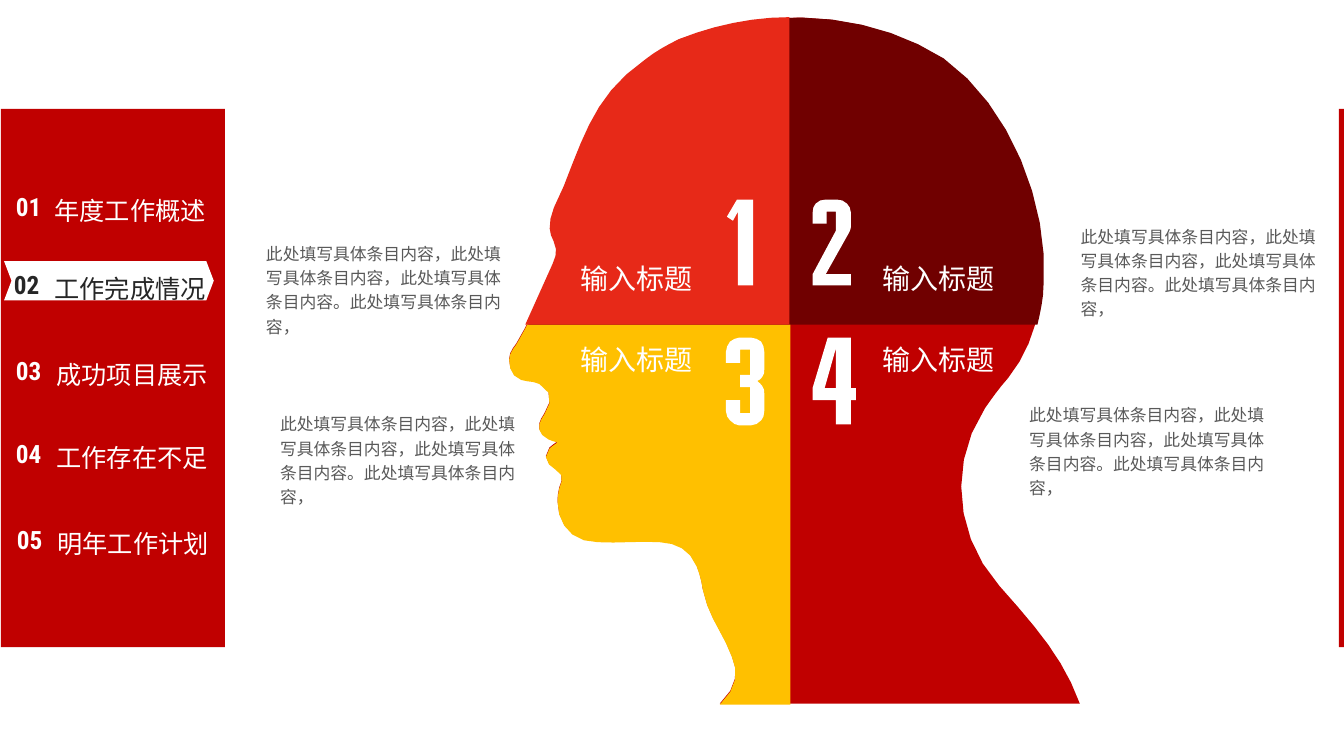
import math
from dataclasses import dataclass

import pptx
import pptx.dml.color
import pptx.enum.shapes
import pptx.enum.text
import pptx.oxml.ns
import pptx.shapes.autoshape
import pptx.slide
import pptx.text.text
import pptx.util
from lxml import etree

PX = 9144  # EMU per px, 100 px to the inch

Step = tuple[int, ...]  # (x, y) is a line, six numbers are a Bezier curve
Contour = list[Step]


@dataclass(frozen=True)
class TextStyle:
    font: str
    size: int
    color: str
    bold: bool = False
    spacing: float = 1.0
    align: pptx.enum.text.PP_ALIGN = pptx.enum.text.PP_ALIGN.LEFT


@dataclass(frozen=True)
class Theme:
    red: str = "C00000"
    dark_red: str = "700000"
    bright_red: str = "E72918"
    yellow: str = "FFC000"
    white: str = "FFFFFF"
    ink: str = "262626"
    grey: str = "595959"
    menu_size: int = 18
    label_size: int = 20
    body_size: int = 12

    def menu_number(self, color: str) -> TextStyle:
        return TextStyle("Roboto Condensed", self.menu_size, color, bold=True)

    def menu_title(self, color: str) -> TextStyle:
        return TextStyle("Open Sans", self.menu_size, color, spacing=1.5,
                         align=pptx.enum.text.PP_ALIGN.CENTER)

    def label(self) -> TextStyle:
        return TextStyle("Noto Sans CJK SC", self.label_size, self.white)

    def body(self) -> TextStyle:
        return TextStyle("Calibri", self.body_size, self.grey, spacing=1.2)


@dataclass(frozen=True)
class Box:
    left: int
    top: int
    width: int
    height: int

    def emu(self) -> list[int]:
        return [n * PX for n in (self.left, self.top, self.width, self.height)]


@dataclass(frozen=True)
class MenuItem:
    number: str
    title: str
    number_left: int
    title_left: int
    top: int
    current: bool = False


@dataclass(frozen=True)
class Region:
    color: str
    contours: list[Contour]


THEME = Theme()
MENU = [
    MenuItem("01", "年度工作概述", 6, 27, 174),
    MenuItem("02", "工作完成情况", 4, 27, 251, current=True),
    MenuItem("03", "成功项目展示", 6, 29, 337),
    MenuItem("04", "工作存在不足", 6, 29, 419),
    MenuItem("05", "明年工作计划", 7, 30, 504),
]
LABEL = "输入标题"
LABEL_LEFTS, LABEL_TOPS = (566, 865), (255, 335)
DESCRIPTION = "此处填写具体条目内容，" * 2 + "此处填写具体条目内容。此处填写具体条目内容，"
DESCRIPTION_CORNERS = [(254, 233), (1062, 216), (268, 402), (1011, 393)]

NAPE: Contour = [(991, 581), (948, 533, 940, 461, 977, 405), (984, 395, 991, 385, 1000, 375),
                 (1021, 349, 1031, 317, 1033, 283)]
SKULL: Contour = [(1039, 204, 1000, 105, 934, 58), (860, 11, 761, 5, 674, 39)]
FOREHEAD: Contour = [(663, 45, 652, 51, 642, 59), (593, 93, 582, 132, 561, 185),
                     (557, 195, 550, 206, 548, 217), (546, 229, 548, 233, 551, 239),
                     (555, 248, 554, 253, 550, 262)]
FACE: Contour = [
    (538, 289, 527, 316, 512, 341), (509, 345, 505, 350, 505, 356),
    (505, 365, 508, 373, 517, 376), (523, 378, 529, 377, 535, 380),
    (549, 387, 547, 400, 540, 410), (538, 414, 535, 417, 535, 420),
    (534, 426, 536, 431, 544, 435), (546, 436, 549, 437, 553, 438),
    (550, 440, 547, 442, 545, 444), (537, 453, 544, 461, 551, 465),
    (556, 469, 559, 471, 557, 477), (554, 484, 553, 491, 553, 497),
    (553, 514, 562, 530, 579, 535), (600, 540, 632, 535, 655, 537),
    (671, 538, 684, 544, 691, 561), (694, 569, 696, 576, 697, 584),
    (703, 613, 717, 626, 726, 651), (732, 665, 732, 681, 714, 698),
]
ONE: Contour = [(747, 198), (747, 283), (732, 283), (732, 210), (727, 219), (721, 215), (731, 198)]
TWO: Contour = [
    (842, 231), (843, 229, 844, 227, 844, 225), (844, 211), (844, 207, 842, 204, 840, 202),
    (837, 199, 834, 198, 830, 198), (819, 198), (815, 198, 812, 199, 809, 202),
    (807, 204, 806, 207, 806, 211), (806, 222), (820, 222), (820, 210), (829, 210),
    (829, 229), (806, 272), (806, 283), (844, 283), (844, 272), (819, 272),
]
THREE: Contour = [
    (745, 335), (749, 335, 752, 337, 755, 339), (757, 342, 758, 345, 758, 349), (758, 367),
    (758, 369, 758, 372, 756, 374), (755, 376, 753, 377, 751, 378),
    (753, 380, 755, 381, 756, 383), (758, 385, 758, 388, 758, 390), (758, 408),
    (758, 412, 757, 415, 755, 417), (752, 420, 749, 422, 745, 422), (733, 422),
    (730, 422, 727, 420, 724, 417), (722, 415, 720, 412, 720, 408), (720, 397), (734, 397),
    (734, 410), (744, 410), (744, 384), (734, 384), (734, 372), (744, 372), (744, 347),
    (734, 347), (734, 360), (720, 360), (720, 349), (720, 345, 722, 342, 724, 339),
    (727, 337, 730, 335, 733, 335),
]
FOUR: Contour = [(844, 335), (844, 385), (849, 385), (849, 397), (844, 397), (844, 421),
                 (829, 421), (829, 397), (806, 397), (806, 385), (821, 335)]
FOUR_HOLE: Contour = [(829, 385), (829, 346), (818, 385)]


def shifted(steps: Contour, dx: int, dy: int) -> Contour:
    return [tuple(n + (dy if i % 2 else dx) for i, n in enumerate(step)) for step in steps]


REGIONS = [
    Region(THEME.red, [NAPE + SKULL + FOREHEAD + FACE
                       + [(1071, 698), (1055, 654, 1030, 625, 991, 581)]]),
    Region(THEME.yellow, [[(784, 19), (747, 19, 710, 26, 674, 40)]
                          + shifted(FOREHEAD + FACE, 0, 1) + [(784, 699)]]),
    Region(THEME.dark_red, [[(1029, 322), (1032, 309, 1035, 296, 1035, 283)]
                            + shifted(SKULL + FOREHEAD, 2, 0) + [(524, 322)]]),
    Region(THEME.bright_red, [[(783, 17), (746, 17, 708, 25, 673, 39)]
                              + shifted(FOREHEAD, -2, 0) + [(521, 322), (783, 322)]]),
    *(Region(THEME.white, digit) for digit in ([ONE], [TWO], [THREE], [FOUR, FOUR_HOLE])),
]


def flatten(contour: Contour) -> list[tuple[int, int]]:
    """Turn lines and Bezier curves into EMU points, more of them on longer curves."""
    points: list[tuple[float, float]] = []
    for step in contour:
        if len(step) == 2:
            points.append((step[0], step[1]))
            continue
        x0, y0 = points[-1]
        x1, y1, x2, y2, x3, y3 = step
        pieces = math.ceil(math.sqrt(math.hypot(x3 - x0, y3 - y0)) / 2)
        for i in range(1, pieces + 1):
            t = i / pieces
            a, b, c, d = (1 - t) ** 3, 3 * t * (1 - t) ** 2, 3 * t * t * (1 - t), t ** 3
            points.append((a * x0 + b * x1 + c * x2 + d * x3, a * y0 + b * y1 + c * y2 + d * y3))
    return [(round(x * PX), round(y * PX)) for x, y in points]


def paint(shape: pptx.shapes.autoshape.Shape, color: str) -> None:
    shape.shadow.inherit = False
    shape.fill.solid()
    shape.fill.fore_color.rgb = pptx.dml.color.RGBColor.from_string(color)
    shape.line.fill.background()


def draw_region(slide: pptx.slide.Slide, region: Region) -> None:
    first, *holes = [flatten(contour) for contour in region.contours]
    builder = slide.shapes.build_freeform(*first[0], scale=1.0)
    builder.add_line_segments(first[1:], close=True)
    for hole in holes:
        builder.move_to(*hole[0])
        builder.add_line_segments(hole[1:], close=True)
    paint(builder.convert_to_shape(), region.color)


def write(frame: pptx.text.text.TextFrame, text: str, style: TextStyle) -> None:
    frame.word_wrap = True
    frame.auto_size = pptx.enum.text.MSO_AUTO_SIZE.SHAPE_TO_FIT_TEXT
    frame.vertical_anchor = pptx.enum.text.MSO_ANCHOR.TOP
    paragraph = frame.paragraphs[0]
    paragraph.alignment, paragraph.line_spacing = style.align, style.spacing
    run = paragraph.add_run()
    run.text = text
    run.font.name, run.font.bold = style.font, style.bold
    run.font.size = pptx.util.Pt(style.size)
    run.font.color.rgb = pptx.dml.color.RGBColor.from_string(style.color)
    east_asian = etree.Element(pptx.oxml.ns.qn("a:ea"), typeface=style.font)
    run.font._element.find(pptx.oxml.ns.qn("a:latin")).addnext(east_asian)


def add_text(slide: pptx.slide.Slide, box: Box, text: str, style: TextStyle) -> None:
    write(slide.shapes.add_textbox(*box.emu()).text_frame, text, style)


def add_menu_item(slide: pptx.slide.Slide, item: MenuItem) -> None:
    """Draw one entry; the current one is the slide's title."""
    color = THEME.ink if item.current else THEME.white
    add_text(slide, Box(item.number_left, item.top + 11, 56, 40), item.number,
             THEME.menu_number(color))
    box = Box(item.title_left, item.top, 204, 50)
    if not item.current:
        add_text(slide, box, item.title, THEME.menu_title(color))
        return
    heading = slide.shapes.title
    heading.left, heading.top, heading.width, heading.height = box.emu()
    slide.shapes._spTree.append(heading._element)
    write(heading.text_frame, item.title, THEME.menu_title(color))


def main() -> None:
    deck = pptx.Presentation()
    deck.slide_width, deck.slide_height = 1333 * PX, 750 * PX
    slide = deck.slides.add_slide(deck.slide_layouts.get_by_name("Title Only"))
    kinds = pptx.enum.shapes.MSO_SHAPE
    for bar in (Box(1, 108, 222, 534), Box(1328, 108, 5, 534)):
        paint(slide.shapes.add_shape(kinds.RECTANGLE, *bar.emu()), THEME.red)
    marker = slide.shapes.add_shape(kinds.CHEVRON, *Box(4, 259, 208, 39).emu())
    marker.adjustments[0] = 0.19
    paint(marker, THEME.white)
    for item in MENU:
        add_menu_item(slide, item)
    for region in REGIONS:
        draw_region(slide, region)
    for top in LABEL_TOPS:
        for left in LABEL_LEFTS:
            add_text(slide, Box(left, top, 146, 44), LABEL, THEME.label())
    for left, top in DESCRIPTION_CORNERS:
        add_text(slide, Box(left, top, 260, 107), DESCRIPTION, THEME.body())
    deck.save("out.pptx")


if __name__ == "__main__":
    main()
